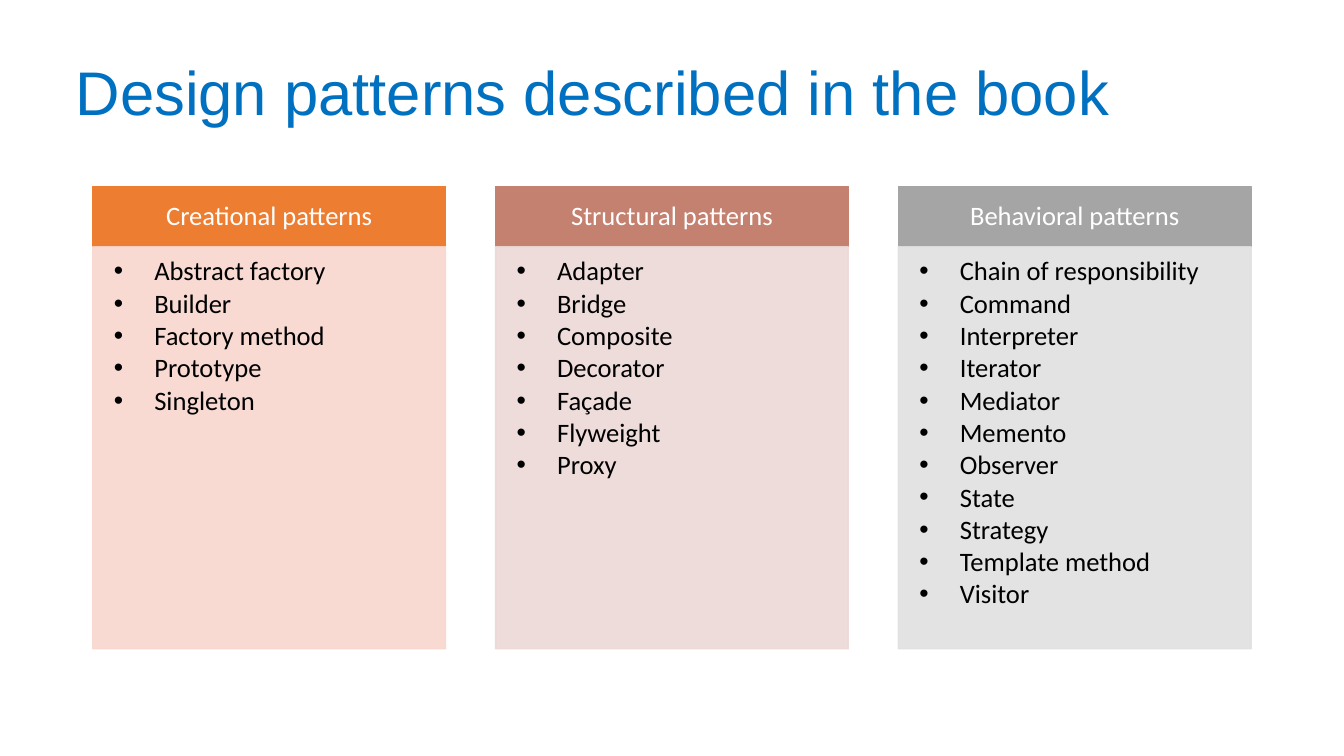
from lxml.etree import SubElement
from pptx import Presentation
from pptx.dml.color import RGBColor
from pptx.enum.shapes import MSO_SHAPE
from pptx.enum.text import MSO_ANCHOR, MSO_AUTO_SIZE, PP_ALIGN
from pptx.oxml.ns import qn
from pptx.util import Cm, Pt

TITLE = "Design patterns described in the book"
CATEGORIES = [
    ("Creational patterns", "orange",
     ["Abstract factory", "Builder", "Factory method", "Prototype", "Singleton"]),
    ("Structural patterns", "brick",
     ["Adapter", "Bridge", "Composite", "Decorator", "Façade", "Flyweight", "Proxy"]),
    ("Behavioral patterns", "gray",
     ["Chain of responsibility", "Command", "Interpreter", "Iterator", "Mediator",
      "Memento", "Observer", "State", "Strategy", "Template method", "Visitor"]),
]
COLORS = {
    "title": "0070C0", "header text": "FFFFFF", "body text": "000000",
    "orange": "ED7D31", "orange tint": "F8D7CE",
    "brick": "C48170", "brick tint": "EDD9D7",
    "gray": "A5A5A5", "gray tint": "E1E1E1",
}

COLUMN_LEFT, COLUMN_PITCH, COLUMN_WIDTH = 2.34, 10.15, 8.89
HEADER_TOP, HEADER_HEIGHT, BODY_HEIGHT = 4.7, 1.52, 10.13
TINT_OPACITY = 90
BULLET_MARGIN, BULLET_INDENT = 1.27, -1.02

TITLE_PLACE = {"left": Cm(1.65), "top": Cm(1), "width": Cm(30.12), "height": Cm(2.79)}
TITLE_FRAME = {"vertical_anchor": MSO_ANCHOR.MIDDLE, "auto_size": MSO_AUTO_SIZE.NONE,
               "word_wrap": True}
TITLE_PARAGRAPH = {"alignment": PP_ALIGN.LEFT, "line_spacing": 0.9}
TITLE_FONT = {"name": "Arial", "size": Pt(44)}

HEADER_FRAME = {"vertical_anchor": MSO_ANCHOR.MIDDLE, "word_wrap": True,
                "margin_left": Cm(0.38), "margin_right": Cm(0.38),
                "margin_top": Cm(0.2), "margin_bottom": Cm(0.2)}
HEADER_PARAGRAPH = {"alignment": PP_ALIGN.CENTER, "line_spacing": 0.9}
BODY_FRAME = {"vertical_anchor": MSO_ANCHOR.TOP, "word_wrap": True,
              "margin_left": Cm(0.28), "margin_right": Cm(0.38),
              "margin_top": Cm(0.28), "margin_bottom": Cm(0.43)}
BODY_PARAGRAPH = {"alignment": PP_ALIGN.LEFT, "line_spacing": 0.9,
                  "space_after": Pt(2.55), "level": 1}
COLUMN_FONT = {"name": "Calibri", "size": Pt(19)}


def apply_format(target, values):
    for name, value in values.items():
        setattr(target, name, value)


def write_lines(frame, lines, frame_format, paragraph_format, font_format, color):
    """Fill a text frame with one formatted paragraph per line."""
    apply_format(frame, frame_format)
    for index, line in enumerate(lines):
        paragraph = frame.add_paragraph() if index else frame.paragraphs[0]
        apply_format(paragraph, paragraph_format)
        run = paragraph.add_run()
        run.text = line
        apply_format(run.font, font_format)
        run.font.color.rgb = RGBColor.from_string(COLORS[color])


def add_bullet(paragraph):
    properties = paragraph._p.get_or_add_pPr()
    properties.set("marL", str(Cm(BULLET_MARGIN)))
    properties.set("indent", str(Cm(BULLET_INDENT)))
    SubElement(properties, qn("a:buFont"), typeface="Arial")
    SubElement(properties, qn("a:buChar"), char="•")


def add_box(group, left, top, height, color, opacity=100):
    box = group.shapes.add_shape(MSO_SHAPE.RECTANGLE, Cm(left), Cm(top),
                                 Cm(COLUMN_WIDTH), Cm(height))
    box.shadow.inherit = False
    box.line.width = Pt(1)
    for fill in (box.fill, box.line.fill):
        fill.solid()
        fill.fore_color.rgb = RGBColor.from_string(COLORS[color])
    if opacity < 100:
        for color_element in box._element.spPr.iter(qn("a:srgbClr")):
            SubElement(color_element, qn("a:alpha"), val=str(opacity * 1000))
    return box


def add_column(group, left, heading, color, patterns):
    header = add_box(group, left, HEADER_TOP, HEADER_HEIGHT, color)
    write_lines(header.text_frame, [heading], HEADER_FRAME, HEADER_PARAGRAPH,
                COLUMN_FONT, "header text")
    body = add_box(group, left, HEADER_TOP + HEADER_HEIGHT, BODY_HEIGHT,
                   f"{color} tint", TINT_OPACITY)
    write_lines(body.text_frame, patterns, BODY_FRAME, BODY_PARAGRAPH,
                COLUMN_FONT, "body text")
    for paragraph in body.text_frame.paragraphs:
        add_bullet(paragraph)


def main():
    presentation = Presentation()
    apply_format(presentation, {"slide_width": Cm(33.87), "slide_height": Cm(19.05)})
    slide = presentation.slides.add_slide(presentation.slide_layouts.get_by_name("Title Only"))

    title = slide.shapes.title
    apply_format(title, TITLE_PLACE)
    write_lines(title.text_frame, [TITLE], TITLE_FRAME, TITLE_PARAGRAPH, TITLE_FONT, "title")

    columns = slide.shapes.add_group_shape()
    for index, category in enumerate(CATEGORIES):
        add_column(columns, COLUMN_LEFT + index * COLUMN_PITCH, *category)

    presentation.save("out.pptx")


if __name__ == "__main__":
    main()
